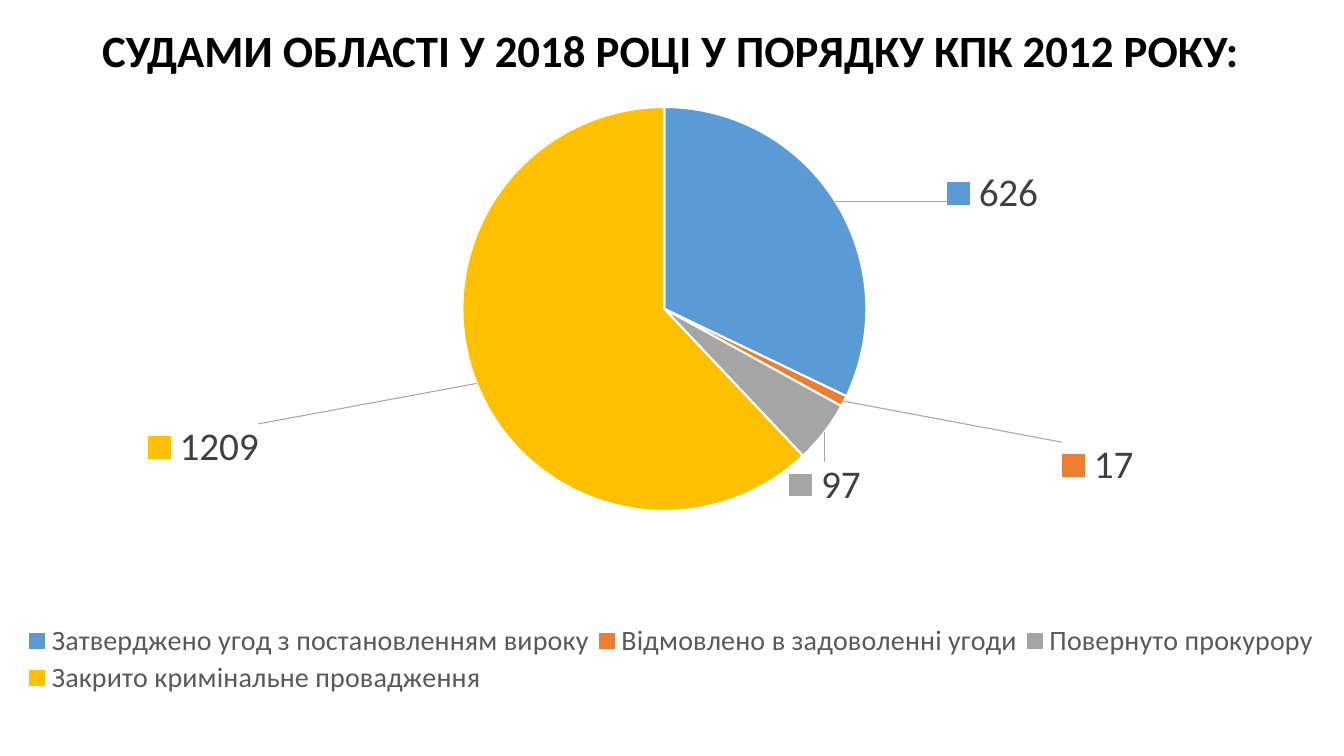
from lxml import etree
from pptx import Presentation
from pptx.chart.data import CategoryChartData
from pptx.dml.color import RGBColor
from pptx.enum import chart as ch, text
from pptx.oxml import parse_xml
from pptx.oxml.ns import nsdecls, qn
from pptx.util import Inches, Pt

BLACK = RGBColor(0x00, 0x00, 0x00)
WHITE = RGBColor(0xFF, 0xFF, 0xFF)
LABEL_GREY = RGBColor(0x40, 0x40, 0x40)
LEGEND_GREY = RGBColor(0x59, 0x59, 0x59)
BLUE = RGBColor(0x5B, 0x9B, 0xD5)
ORANGE = RGBColor(0xED, 0x7D, 0x31)
GREY = RGBColor(0xA5, 0xA5, 0xA5)
GOLD = RGBColor(0xFF, 0xC0, 0x00)

outcomes = [
    ("Затверджено угод з постановленням вироку", 626, BLUE, (0.08, 0.03)),
    ("Відмовлено в задоволенні угоди", 17, ORANGE, (0.16, 0.06)),
    ("Повернуто прокурору", 97, GREY, (-0.03, 0.04)),
    ("Закрито кримінальне провадження", 1209, GOLD, (-0.16, 0.06)),
]


def style(font, size, color):
    font.name = "Calibri"
    font.size = Pt(size)
    font.color.rgb = color


def manual_layout(**settings):
    layout = parse_xml(f"<c:layout {nsdecls('c')}><c:manualLayout/></c:layout>")
    for key, value in settings.items():
        etree.SubElement(layout[0], qn(f"c:{key}")).set("val", str(value))
    return layout


prs = Presentation()
prs.slide_width, prs.slide_height = Inches(13.33), Inches(7.5)
slide = prs.slides.add_slide(prs.slide_layouts[5])

heading = slide.shapes.title
heading.left, heading.top = Inches(-0.03), Inches(0)
heading.width, heading.height = Inches(13.37), Inches(1.05)
heading.text_frame.text = "СУДАМИ ОБЛАСТІ У 2018 РОЦІ У ПОРЯДКУ КПК 2012 РОКУ:"
heading.text_frame.vertical_anchor = text.MSO_ANCHOR.MIDDLE
heading_line = heading.text_frame.paragraphs[0]
heading_line.alignment = text.PP_ALIGN.CENTER
heading_line.line_spacing = 0.9
style(heading_line.runs[0].font, 32, BLACK)
heading_line.runs[0].font.bold = True

court_data = CategoryChartData()
court_data.categories = [name for name, *_ in outcomes]
court_data.add_series("Series 1", [count for _, count, *_ in outcomes])
pie = slide.shapes.add_chart(
    ch.XL_CHART_TYPE.PIE, Inches(0), Inches(0.91), Inches(13.18), Inches(6.33), court_data
).chart
pie.has_title = False
style(pie.font, 10, BLACK)

pie.has_legend = True
pie.legend.position = ch.XL_LEGEND_POSITION.BOTTOM
pie.legend.include_in_layout = False
style(pie.legend.font, 20, LEGEND_GREY)
for old in pie.legend._element.findall(qn("c:layout")):
    pie.legend._element.remove(old)
pie.legend._element.find(qn("c:legendPos")).addnext(
    manual_layout(xMode="edge", yMode="edge", x=0.015, y=0.83, w=0.98, h=0.12)
)

plot_area = pie._chartSpace.chart.plotArea
for old in plot_area.findall(qn("c:layout")):
    plot_area.remove(old)
plot_area.insert(0, manual_layout(
    layoutTarget="inner", xMode="edge", yMode="edge", x=0, y=0.024, w=1, h=0.633
))

pie.plots[0].vary_by_categories = True
verdicts = pie.plots[0].series[0]
counts = verdicts.data_labels
counts.show_value = True
counts.show_legend_key = True
counts.position = ch.XL_LABEL_POSITION.OUTSIDE_END
style(counts.font, 28, LABEL_GREY)

for index, (_, _, color, (dx, dy)) in enumerate(outcomes):
    wedge = verdicts.points[index]
    wedge.format.fill.solid()
    wedge.format.fill.fore_color.rgb = color
    wedge.format.line.color.rgb = WHITE
    wedge.format.line.width = Pt(1.5)
    style(wedge.data_label.font, 28, LABEL_GREY)
    wedge.data_label.position = ch.XL_LABEL_POSITION.OUTSIDE_END
    count_label = verdicts._element.xpath(f".//c:dLbl[c:idx/@val='{index}']")[0]
    count_label.find(qn("c:idx")).addnext(manual_layout(x=dx, y=dy))
    count_label.find(qn("c:showLegendKey")).set("val", "1")

for old in counts._element.findall(qn("c:showLeaderLines")):
    counts._element.remove(old)
etree.SubElement(counts._element, qn("c:showLeaderLines")).set("val", "1")
counts._element.append(parse_xml(
    f"<c:leaderLines {nsdecls('c', 'a')}><c:spPr><a:ln w='9525'><a:solidFill>"
    f"<a:srgbClr val='{GREY}'/></a:solidFill></a:ln></c:spPr></c:leaderLines>"
))

prs.save("out.pptx")
